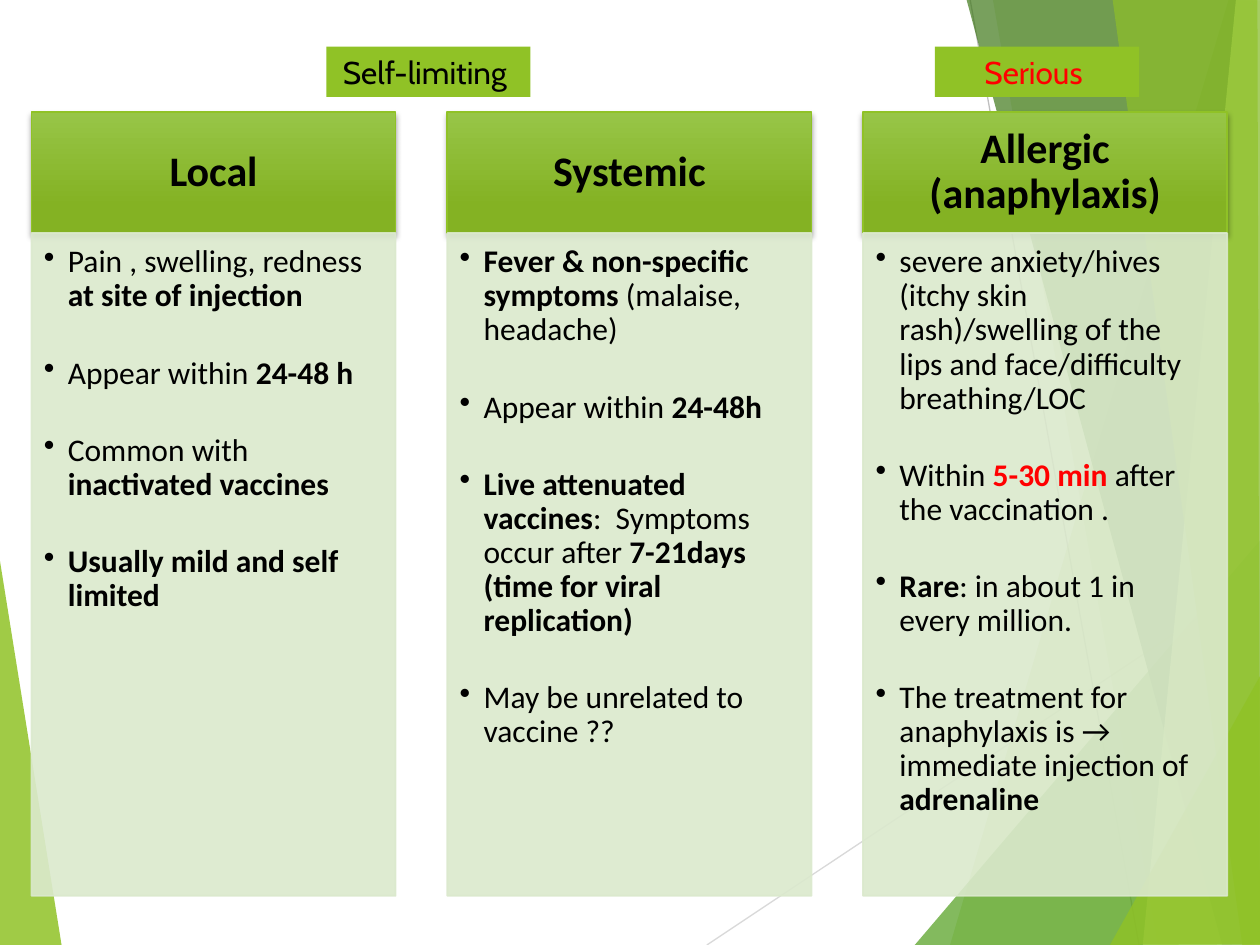
"""Build the slide that sorts vaccine reactions into local, systemic and allergic."""
from dataclasses import dataclass

from lxml import etree
from pptx import Presentation
from pptx.dml.color import RGBColor
from pptx.enum.shapes import MSO_CONNECTOR, MSO_SHAPE
from pptx.enum.text import MSO_ANCHOR, PP_ALIGN
from pptx.oxml.ns import qn
from pptx.util import Inches, Pt

RECTANGLE = MSO_SHAPE.RECTANGLE
STRAIGHT = MSO_CONNECTOR.STRAIGHT
TOP, MIDDLE = MSO_ANCHOR.TOP, MSO_ANCHOR.MIDDLE
LEFT, CENTER = PP_ALIGN.LEFT, PP_ALIGN.CENTER


@dataclass(frozen=True)
class Theme:
    """Colours, fonts and type sizes of the slide."""
    green: str = "90C226"
    head_light: str = "97C547"
    head_dark: str = "84B223"
    panel: str = "DBE9CD"
    ink: str = "000000"
    alert: str = "FF0000"
    body_font: str = "Calibri"
    label_font: str = "Cabin"
    head_size: int = 24
    body_size: int = 18


@dataclass(frozen=True)
class Grid:
    """Slide size in inches, and columns and rows as percentages of it."""
    width: float = 10
    height: float = 7.5
    first: float = 2.5
    step: float = 33
    column: float = 28.9
    head_top: float = 11.87
    head_height: float = 12.8
    body_top: float = 24.67
    body_height: float = 70.13
    label_top: float = 4.93
    label_width: float = 16.2
    label_height: float = 5.33

    def spot(self, x, y):
        """Turn percentages of the slide into lengths."""
        return Inches(self.width * x / 100), Inches(self.height * y / 100)


THEME, GRID = Theme(), Grid()

FIRST_FACET = (THEME.green, 85, [(-0.1, 58.53), (4.9, 100.1), (-0.1, 100)])
RAYS = [("D9D9D9", (56.1, 100), (100.1, 60.93)), ("BFBFBF", (77, 0), (90.4, 100))]
FACETS = [
    (THEME.green, 30, [(97.5, 0), (75.4, 100), (100.2, 100.1), (100.1, 0.1)]),
    (THEME.green, 20, [(78.8, -0.1), (91.9, 100), (100.1, 100), (100.1, -0.1)]),
    ("54A021", 72, [(72.6, 100), (100, 57.2), (100.1, 100)]),
    ("3F7819", 70, [(76.7, -0.1), (97, 100), (100.1, 99.9), (100.1, -0.1)]),
    ("C0E474", 70, [(98.1, -0.1), (90.7, 100), (100.1, 100), (100, -0.1)]),
    (THEME.green, 65, [(88.3, -0.1), (98.6, 100), (100, 100), (99.8, -0.1)]),
    (THEME.green, 80, [(88.1, 100), (100.1, 71.33), (100.1, 99.9)]),
]

PLAIN = {"bold": False, "color": THEME.ink}
STRONG = {"bold": True, "color": THEME.ink}
ALERT = {"bold": True, "color": THEME.alert}

REACTIONS = [
    ("Local", [
        [("Pain , swelling, redness ", PLAIN), ("at site of injection", STRONG)],
        [("Appear within ", PLAIN), ("24-48 h", STRONG)],
        [("Common with ", PLAIN), ("inactivated vaccines", STRONG)],
        [("Usually mild and self limited", STRONG)],
    ]),
    ("Systemic", [
        [("Fever & non-specific symptoms ", STRONG), ("(malaise, headache)", PLAIN)],
        [("Appear within ", PLAIN), ("24-48h", STRONG)],
        [("Live attenuated vaccines", STRONG), (":  Symptoms occur after ", PLAIN),
         ("7-21days (time for viral replication)", STRONG)],
        [("May be unrelated to vaccine ??", PLAIN)],
    ]),
    ("Allergic (anaphylaxis)", [
        [("severe anxiety/hives (itchy skin rash)/swelling of the lips and "
          "face/difficulty breathing/LOC", PLAIN)],
        [("Within ", PLAIN), ("5-30 min ", ALERT), ("after the vaccination .", PLAIN)],
        [("Rare", STRONG), (": in about 1 in every million.", PLAIN)],
        [("The treatment for anaphylaxis is → immediate injection of ", PLAIN),
         ("adrenaline", STRONG)],
    ]),
]
LABELS = [("Self-limiting ", 25.9, THEME.ink), ("Serious ", 74.2, THEME.alert)]


def apply(target, values):
    """Set each named value on the target."""
    for name, value in values.items():
        setattr(target, name, value)


def set_alpha(fill, percent):
    """Paint a solid fill's colour with the given opacity."""
    color = fill._xPr.find(qn("a:solidFill"))[0]
    etree.SubElement(color, qn("a:alpha"), val=str(percent * 1000))


def paint(fill, color, opacity=100):
    """Give a fill one colour and an opacity."""
    fill.solid()
    fill.fore_color.rgb = RGBColor.from_string(color)
    if opacity < 100:
        set_alpha(fill, opacity)


def add_facet(slide, color, opacity, corners):
    """Draw one translucent background polygon."""
    start, *others = [GRID.spot(*corner) for corner in corners]
    outline = slide.shapes.build_freeform(*start, scale=1.0)
    outline.add_line_segments(others, close=True)
    facet = outline.convert_to_shape()
    facet.shadow.inherit = False
    paint(facet.fill, color, opacity)
    facet.line.fill.background()


def add_ray(slide, color, start, end):
    """Draw one thin background line."""
    ray = slide.shapes.add_connector(STRAIGHT, *GRID.spot(*start), *GRID.spot(*end))
    ray.line.width = Pt(0.75)
    paint(ray.line.fill, color)
    etree.SubElement(ray._element.spPr, qn("a:effectLst"))


def add_block(slide, left, top, width, height, anchor, insets):
    """Add a rectangle ready for text, with insets from left clockwise."""
    block = slide.shapes.add_shape(RECTANGLE, *GRID.spot(left, top), *GRID.spot(width, height))
    block.shadow.inherit = False
    sides = ("margin_left", "margin_top", "margin_right", "margin_bottom")
    margins = {side: Inches(inset) for side, inset in zip(sides, insets)}
    apply(block.text_frame, {"word_wrap": True, "vertical_anchor": anchor, **margins})
    return block


def write(paragraph, phrases, font, size, **layout):
    """Fill a paragraph with formatted phrases."""
    apply(paragraph, layout)
    for words, style in phrases:
        run = paragraph.add_run()
        run.text = words
        apply(run.font, {"name": font, "size": Pt(size), "bold": style["bold"]})
        run.font.color.rgb = RGBColor.from_string(style["color"])


def add_bullet(paragraph):
    """Give a paragraph a hanging round bullet."""
    properties = paragraph._p.get_or_add_pPr()
    indent = Inches(0.19)
    properties.set("marL", str(indent))
    properties.set("indent", str(-indent))
    etree.SubElement(properties, qn("a:buChar"), char="•")


def add_drop_shadow(block):
    """Cast a soft shadow below a block."""
    effects = block._element.spPr.find(qn("a:effectLst"))
    shadow = etree.SubElement(effects, qn("a:outerShdw"), blurRad=str(Pt(3)), dist=str(Pt(2)),
                              dir="5400000", rotWithShape="0")
    color = etree.SubElement(shadow, qn("a:srgbClr"), val=THEME.ink)
    etree.SubElement(color, qn("a:alpha"), val="35000")


def add_heading(slide, left, name):
    """Add the shaded heading of a column."""
    heading = add_block(slide, left, GRID.head_top, GRID.column, GRID.head_height,
                        MIDDLE, (0.19, 0.11, 0.19, 0.11))
    heading.fill.gradient()
    heading.fill.gradient_angle = 270
    shades = [(0, THEME.head_light), (0.78, THEME.head_dark)]
    for stop, (position, color) in zip(heading.fill.gradient_stops, shades):
        stop.position = position
        stop.color.rgb = RGBColor.from_string(color)
    paint(heading.line.fill, THEME.green)
    heading.line.width = Pt(1)
    add_drop_shadow(heading)
    write(heading.text_frame.paragraphs[0], [(name, STRONG)], THEME.body_font,
          THEME.head_size, alignment=CENTER, line_spacing=0.9)


def add_panel(slide, left, facts):
    """Add the bulleted panel of a column."""
    panel = add_block(slide, left, GRID.body_top, GRID.column, GRID.body_height,
                      TOP, (0.1, 0.1, 0.14, 0.16))
    paint(panel.fill, THEME.panel, 90)
    paint(panel.line.fill, THEME.panel, 90)
    panel.line.width = Pt(1)
    frame = panel.text_frame
    for index, phrases in enumerate(facts):
        fact = frame.add_paragraph() if index else frame.paragraphs[0]
        write(fact, phrases, THEME.body_font, THEME.body_size, alignment=LEFT, level=1,
              line_spacing=0.9, space_after=Pt(24.7))
        add_bullet(fact)


def add_label(slide, words, left, color):
    """Add a severity label above the columns."""
    label = add_block(slide, left, GRID.label_top, GRID.label_width, GRID.label_height,
                      MIDDLE, (0.1, 0.05, 0.1, 0.05))
    paint(label.fill, THEME.green)
    label.line.fill.background()
    write(label.text_frame.paragraphs[0], [(words, {"bold": False, "color": color})],
          THEME.label_font, THEME.body_size, alignment=CENTER)


def main():
    """Build and save the slide."""
    deck = Presentation()
    apply(deck, {"slide_width": Inches(GRID.width), "slide_height": Inches(GRID.height)})
    slide = deck.slides.add_slide(deck.slide_layouts[6])
    add_facet(slide, *FIRST_FACET)
    for ray in RAYS:
        add_ray(slide, *ray)
    for facet in FACETS:
        add_facet(slide, *facet)
    for index, (name, facts) in enumerate(REACTIONS):
        left = GRID.first + index * GRID.step
        add_heading(slide, left, name)
        add_panel(slide, left, facts)
    for label in LABELS:
        add_label(slide, *label)
    deck.save("out.pptx")


if __name__ == "__main__":
    main()
